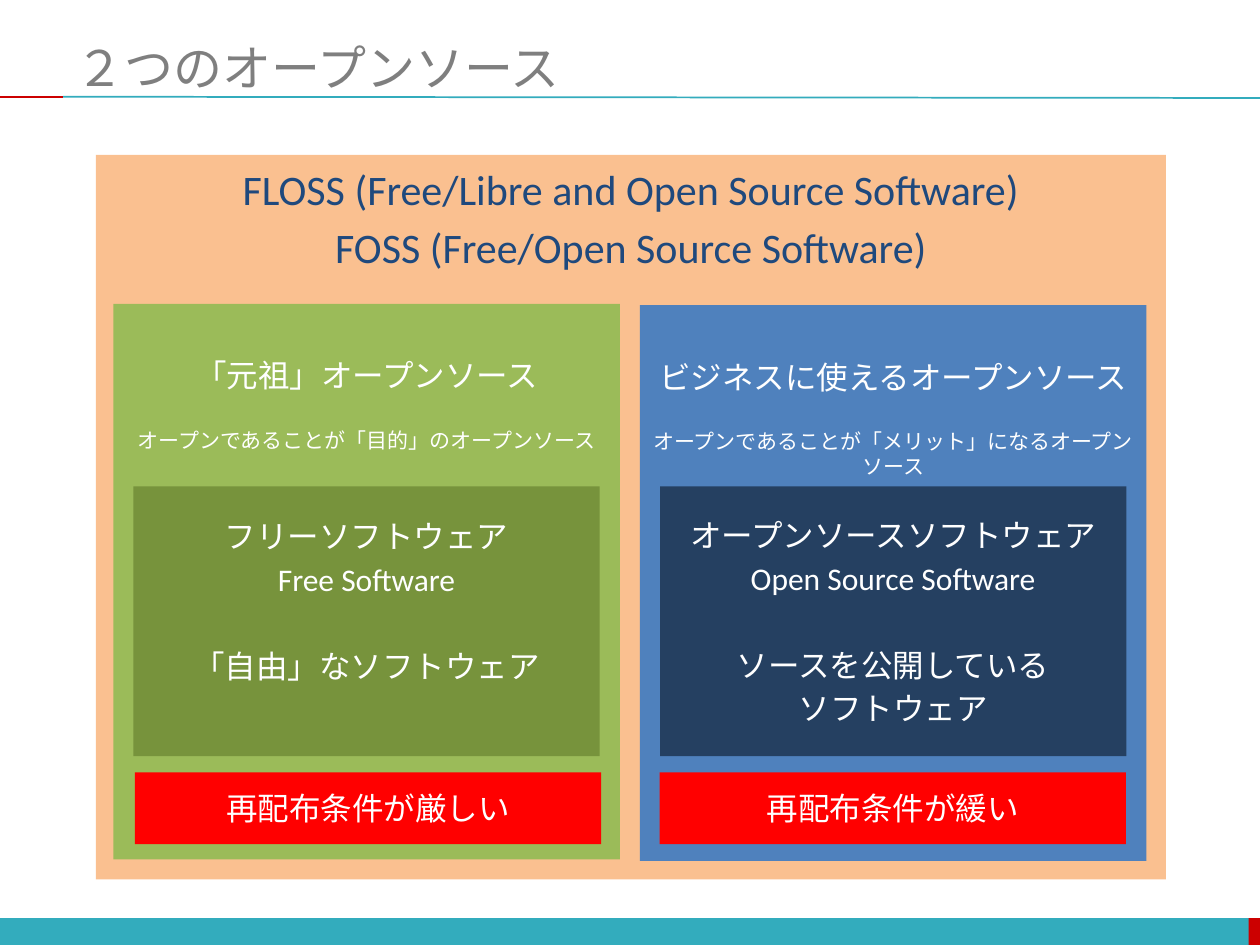
from dataclasses import dataclass

import pptx
import pptx.dml.color
import pptx.enum.shapes
import pptx.enum.text
import pptx.oxml
import pptx.oxml.ns
import pptx.util

Pt = pptx.util.Pt
ShapeKind = pptx.enum.shapes.MSO_SHAPE
Anchor = pptx.enum.text.MSO_ANCHOR
Align = pptx.enum.text.PP_ALIGN

COLORS = {
    "teal": "33ACBD", "crimson": "CC0000", "gray": "7F7F7F",
    "peach": "FAC090", "navy": "1F497D", "white": "FFFFFF",
    "green": "9BBB59", "olive": "77933C",
    "blue": "4F81BD", "midnight": "254061", "red": "FF0000",
}
LINE_GAP = 3.2   # usual space between paragraphs
BLANK_GAP = 28   # space as high as one skipped line


@dataclass
class Line:
    text: str
    size: float = 18
    before: float = LINE_GAP


@dataclass
class Panel:
    left: float
    top: float
    width: float
    height: float
    fill: str
    lines: list[Line]
    color: str = "white"
    anchor: Anchor = Anchor.MIDDLE
    margin_top: float = 3.6
    margin_bottom: float = 3.6


@dataclass
class Column:
    left: float
    top: float
    fill: str
    heading: str
    purpose: str
    inner_fill: str
    inner_lines: list[Line]
    inner_margin_bottom: float
    terms: str
    terms_left: float


def rgb(name: str) -> pptx.dml.color.RGBColor:
    return pptx.dml.color.RGBColor.from_string(COLORS[name])


def add_block(slide, kind, left: float, top: float, width: float, height: float, fill: str):
    shape = slide.shapes.add_shape(kind, Pt(left), Pt(top), Pt(width), Pt(height))
    shape.shadow.inherit = False
    shape.fill.solid()
    shape.fill.fore_color.rgb = rgb(fill)
    shape.line.fill.background()
    return shape


def add_rule(slide, start: float, end: float, top: float, bottom: float, color: str) -> None:
    connector = slide.shapes.add_connector(
        pptx.enum.shapes.MSO_CONNECTOR.STRAIGHT, Pt(start), Pt(top), Pt(end), Pt(bottom))
    connector.line.color.rgb = rgb(color)
    connector.line.width = Pt(1)
    properties = connector._element.spPr
    properties.append(pptx.oxml.parse_xml(
        f'<a:effectLst {pptx.oxml.ns.nsdecls("a")}/>'))


def add_panel(slide, panel: Panel) -> None:
    shape = add_block(slide, ShapeKind.ROUNDED_RECTANGLE, panel.left, panel.top,
                      panel.width, panel.height, panel.fill)
    shape.adjustments[0] = 0
    frame = shape.text_frame
    frame.word_wrap = True
    frame.vertical_anchor = panel.anchor
    frame.margin_top = Pt(panel.margin_top)
    frame.margin_bottom = Pt(panel.margin_bottom)
    frame.text = "\n".join(line.text for line in panel.lines)
    for index, (paragraph, line) in enumerate(zip(frame.paragraphs, panel.lines)):
        paragraph.alignment = Align.CENTER
        paragraph.space_before = Pt(line.before if index else 0)
        for run in paragraph.runs:
            run.font.size = Pt(line.size)
            run.font.name = "Calibri"
            run.font.color.rgb = rgb(panel.color)


def column_panels(column: Column) -> list[Panel]:
    return [
        Panel(column.left, column.top, 289.4, 317.5, column.fill,
              [Line(column.heading), Line(column.purpose, 12, 19)],
              anchor=Anchor.TOP, margin_top=30),
        Panel(column.left + 11.5, 278, 266.4, 154, column.inner_fill,
              column.inner_lines, margin_bottom=column.inner_margin_bottom),
        Panel(column.terms_left, 441.4, 266.4, 41, "red", [Line(column.terms)]),
    ]


def add_title(slide, text: str) -> None:
    title = slide.shapes.title
    title.left, title.top, title.width, title.height = Pt(36), Pt(21.6), Pt(684), Pt(33)
    frame = title.text_frame
    frame.auto_size = pptx.enum.text.MSO_AUTO_SIZE.NONE
    frame.word_wrap = True
    frame.vertical_anchor = Anchor.MIDDLE
    frame.text = text
    paragraph = frame.paragraphs[0]
    paragraph.alignment = Align.LEFT
    font = paragraph.runs[0].font
    font.size, font.name = Pt(28), "Arial"
    font.color.rgb = rgb("gray")


COLUMNS = [
    Column(64.8, 173.6, "green", "「元祖」オープンソース",
           "オープンであることが「目的」のオープンソース", "olive",
           [Line("フリーソフトウェア"), Line("Free Software"),
            Line("「自由」なソフトウェア", before=BLANK_GAP)],
           27, "再配布条件が厳しい", 77.1),
    Column(365.7, 174.4, "blue", "ビジネスに使えるオープンソース",
           "オープンであることが「メリット」になるオープンソース", "midnight",
           [Line("オープンソースソフトウェア"), Line("Open Source Software"),
            Line("ソースを公開している", before=BLANK_GAP), Line("ソフトウェア")],
           3.6, "再配布条件が緩い", 377),
]


def main() -> None:
    presentation = pptx.Presentation()
    presentation.slide_width, presentation.slide_height = Pt(720), Pt(540)
    slide = presentation.slides.add_slide(presentation.slide_layouts[5])

    # Footer band and rule under the title
    add_block(slide, ShapeKind.RECTANGLE, 0, 524.6, 720, 15.6, "teal")
    add_block(slide, ShapeKind.RECTANGLE, 713.5, 524.6, 6.5, 15.6, "crimson")
    add_rule(slide, 36, 720, 55.3, 56, "teal")
    add_rule(slide, 0, 36, 55.3, 55.3, "crimson")

    add_title(slide, "２つのオープンソース")

    # Outer panel, then the two columns inside it
    add_panel(slide, Panel(
        54.8, 88.5, 611.4, 414, "peach",
        [Line("FLOSS (Free/Libre and Open Source Software)", 24),
         Line("FOSS (Free/Open Source Software)", 24, 4)],
        color="navy", anchor=Anchor.TOP, margin_top=5))
    for column in COLUMNS:
        for panel in column_panels(column):
            add_panel(slide, panel)

    presentation.save("out.pptx")


if __name__ == "__main__":
    main()
